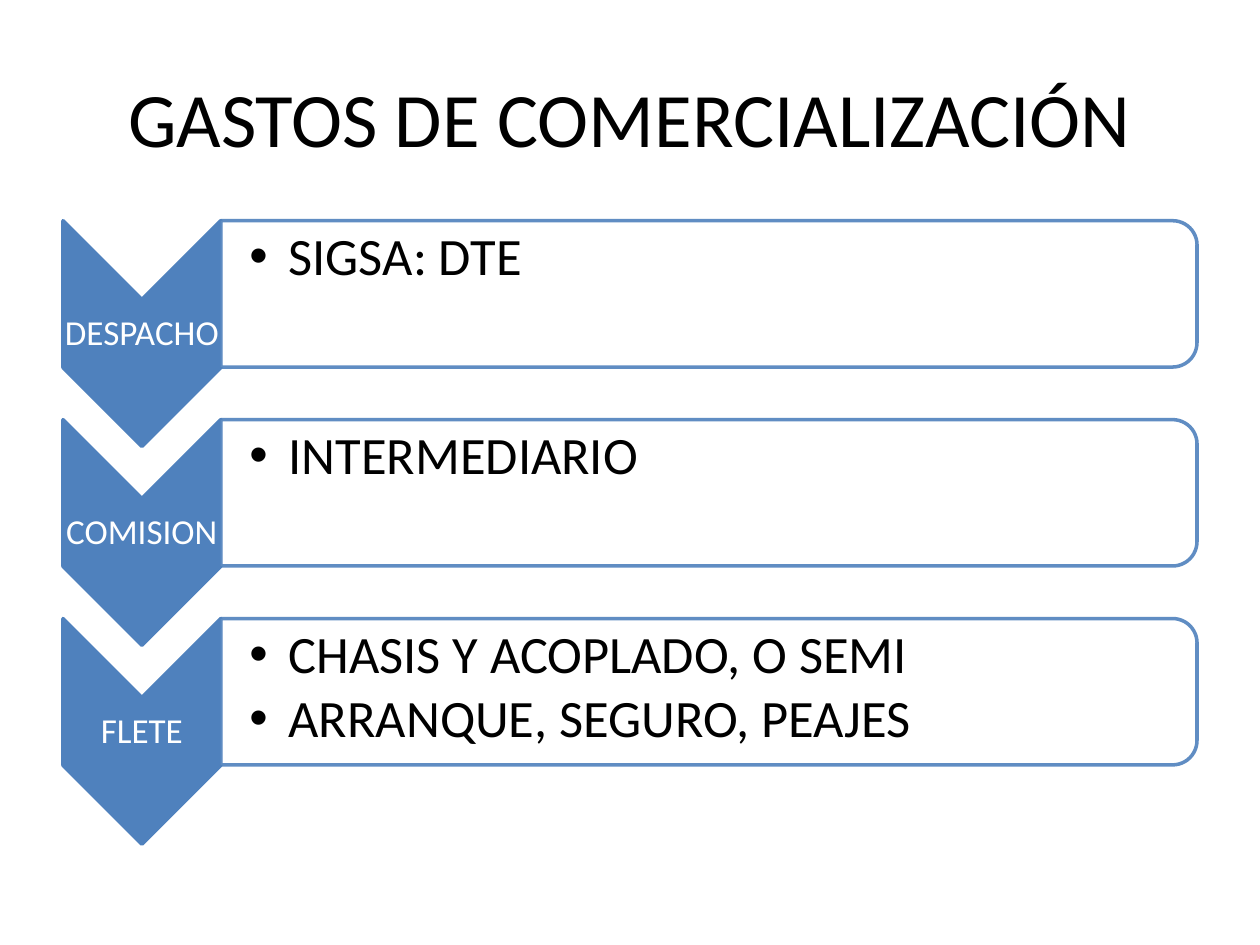
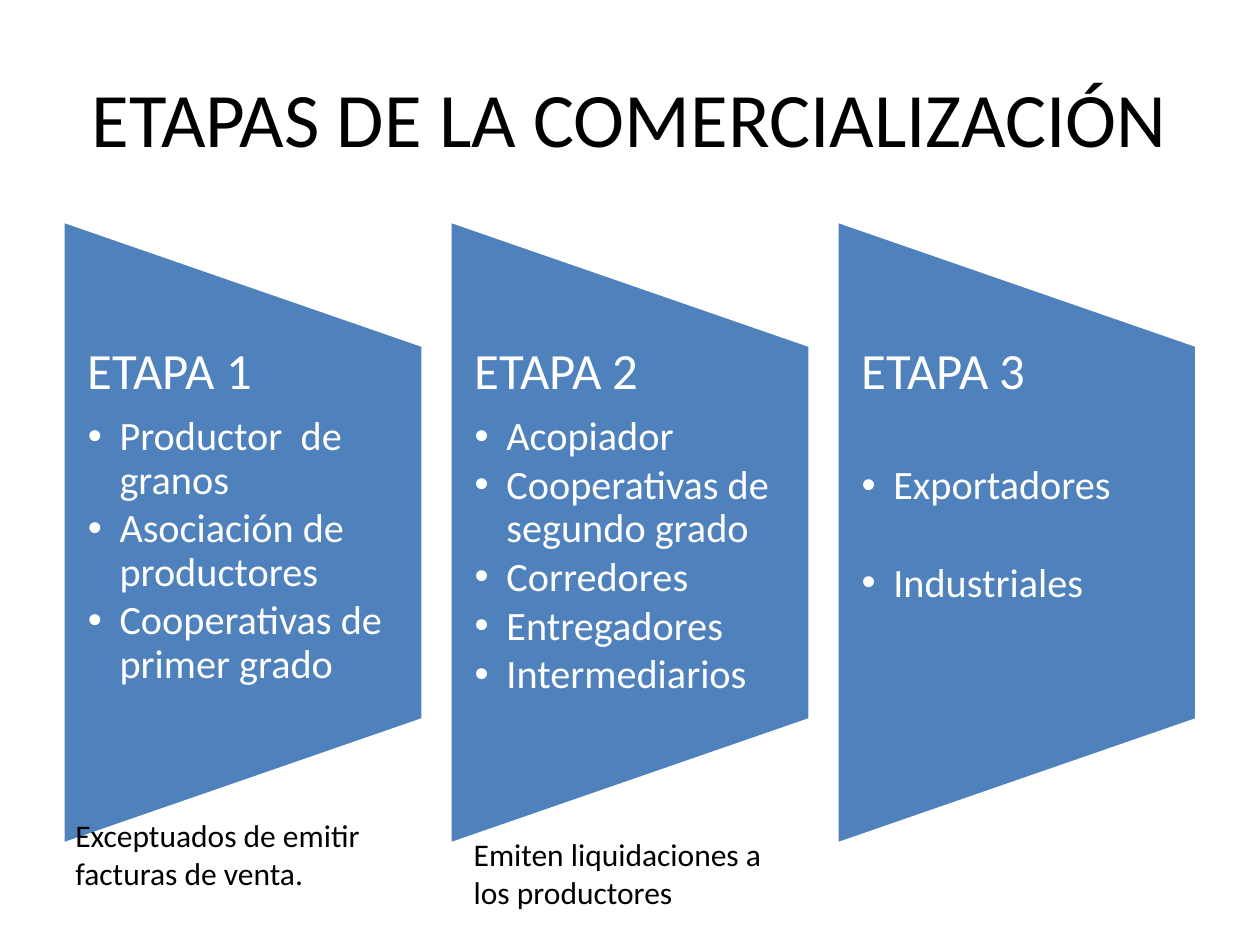
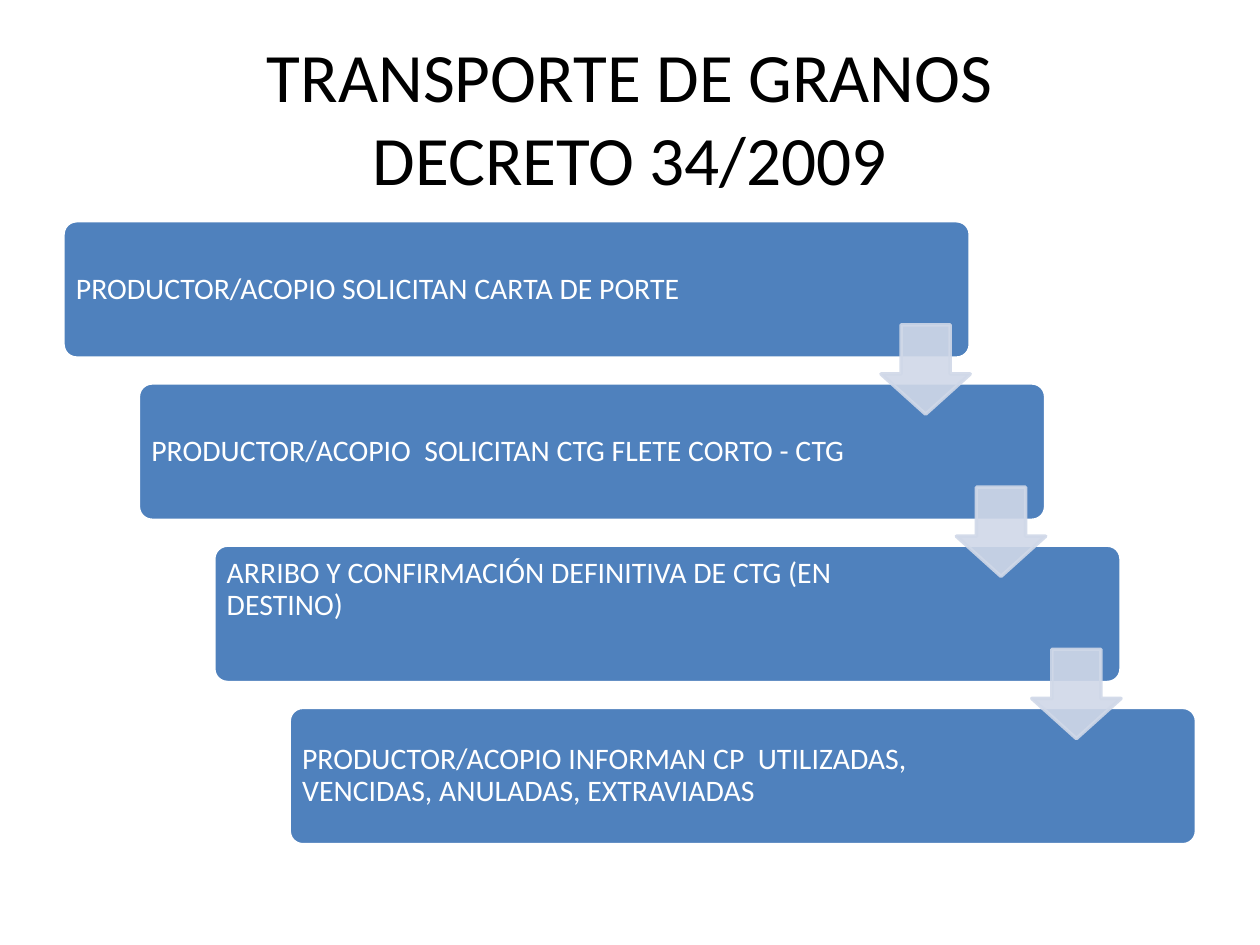
from lxml.etree import SubElement
from pptx import Presentation
from pptx.dml.color import RGBColor
from pptx.enum.shapes import MSO_SHAPE
from pptx.enum.text import MSO_ANCHOR, PP_ALIGN
from pptx.oxml.ns import qn
from pptx.util import Cm, Pt

HUES = {"blue": "4F81BD", "pale": "D0D8E8", "white": "FFFFFF", "black": "000000"}
FONT = "Calibri"
LEFT, TOP = 1.27, 4.45


def block(slide, box, kind=None, fill=None, line=None, turn=0, alpha=None,
          pads=(0.25, 0.13, 0.25, 0.13), anchor=MSO_ANCHOR.TOP):
    """Add a shape, or a text box without kind; box (cm) is the area seen after the turn."""
    left, top, wide, high = box
    if turn:
        left, top = left + (wide - high) / 2, top + (high - wide) / 2
        wide, high = high, wide
    area = [Cm(size) for size in (left, top, wide, high)]
    if kind is None:
        shape = slide.shapes.add_textbox(*area)
    else:
        shape = slide.shapes.add_shape(kind, *area)
        shape.shadow.inherit = False
        shape.rotation = turn
        shape.fill.solid()
        shape.fill.fore_color.rgb = RGBColor.from_string(HUES[fill])
        shape.line.color.rgb = RGBColor.from_string(HUES[line])
        shape.line.width = Pt(2)
    if alpha:
        for tint in shape.fill._xPr.iter(qn("a:srgbClr")):
            SubElement(tint, qn("a:alpha"), val=str(alpha * 1000))
    frame = shape.text_frame
    frame.word_wrap = True
    frame.vertical_anchor = anchor
    frame.margin_left, frame.margin_top, frame.margin_right, frame.margin_bottom = map(Cm, pads)
    return shape


def say(frame, text, size, hue, align=PP_ALIGN.LEFT, space=0.9, after=0, before=0, indent=0):
    """Add one paragraph; an indent (cm) makes it a bullet."""
    para = frame.add_paragraph() if frame.text else frame.paragraphs[0]
    para.alignment = align
    para.line_spacing = space
    para.space_after, para.space_before = Pt(after), Pt(before)
    if indent:
        props = para._p.get_or_add_pPr()
        props.set("marL", str(Cm(indent)))
        props.set("indent", str(-Cm(indent)))
        SubElement(props, qn("a:buFont"), typeface="Arial")
        SubElement(props, qn("a:buChar"), char="•")
    for row, part in enumerate(text.split("\n")):
        if row:
            para.add_line_break()
        run = para.add_run()
        run.text = part
        run.font.name = FONT
        run.font.size = Pt(size)
        run.font.color.rgb = RGBColor.from_string(HUES[hue])


deck = Presentation()
deck.slide_width, deck.slide_height = Cm(25.4), Cm(19.05)

# Titles
slides = []
for text, size in [("GASTOS DE COMERCIALIZACIÓN", 44),
                   ("ETAPAS DE LA COMERCIALIZACIÓN", 44),
                   ("TRANSPORTE DE GRANOS\nDECRETO 34/2009", 39.6)]:
    slide = deck.slides.add_slide(deck.slide_layouts[5])
    title = slide.shapes.title
    title.left, title.top, title.width, title.height = Cm(LEFT), Cm(0.76), Cm(22.86), Cm(3.18)
    title.text_frame.vertical_anchor = MSO_ANCHOR.MIDDLE
    say(title.text_frame, text, size, "black", PP_ALIGN.CENTER, space=1)
    slides.append(slide)
costs, stages, freight = slides

# Costs: a chevron and a bar per row
for row, (label, items) in enumerate([
        ("DESPACHO", ["SIGSA: DTE"]),
        ("COMISION", ["INTERMEDIARIO"]),
        ("FLETE", ["CHASIS Y ACOPLADO, O SEMI", "ARRANQUE, SEGURO, PEAJES"])]):
    top = TOP + row * 4.01
    block(costs, (LEFT, top, 3.18, 4.55), MSO_SHAPE.CHEVRON, "blue", "blue", turn=90)
    tag = block(costs, (LEFT, top + 1.6, 3.18, 1.37), pads=[0.03] * 4, anchor=MSO_ANCHOR.MIDDLE)
    say(tag.text_frame, label, 20, "white", PP_ALIGN.CENTER)
    block(costs, (4.45, top, 19.68, 2.95), MSO_SHAPE.ROUND_2_SAME_RECTANGLE,
          "white", "blue", turn=90, alpha=90)
    note = block(costs, (4.45, top + 0.15, 19.53, 2.67), pads=(0.58, 0.05, 0.05, 0.05))
    for item in items:
        say(note.text_frame, item, 30, "black", after=4, indent=0.79)

# Stages: a column each, with extra room above the items where they are few
for col, (items, room) in enumerate([
        (["Productor  de granos", "Asociación de productores",
          "Cooperativas de primer grado"], 0),
        (["Acopiador", "Cooperativas de segundo grado", "Corredores",
          "Entregadores", "Intermediarios"], 0),
        (["Exportadores", "Industriales"], 28)]):
    left = LEFT + col * 7.8
    block(stages, (left, TOP, 7.26, 12.57), MSO_SHAPE.FLOWCHART_MANUAL_OPERATION,
          "blue", "white", turn=270)
    note = block(stages, (left, 6.96, 7.26, 7.54), pads=(0.5, 0, 0.5, 0))
    say(note.text_frame, f"ETAPA {col + 1}", 29, "white", after=9)
    for item in items:
        say(note.text_frame, item, 23, "white", after=3, before=room, indent=0.64)

for left, top, wide, text in [
        (LEFT, 16.33, 6.63, "Exceptuados de emitir facturas de venta."),
        (9.3, 16.71, 6.81, "Emiten liquidaciones a los productores")]:
    note = block(stages, (left, top, wide, 1.8))
    say(note.text_frame, text, 18, "black", space=1)

# Freight: steps going down to the right, then the arrows between them
STEPS = [("PRODUCTOR/ACOPIO SOLICITAN CARTA DE PORTE", MSO_ANCHOR.MIDDLE),
         ("PRODUCTOR/ACOPIO  SOLICITAN CTG FLETE CORTO - CTG", MSO_ANCHOR.MIDDLE),
         ("ARRIBO Y CONFIRMACIÓN DEFINITIVA DE CTG (EN DESTINO)", MSO_ANCHOR.TOP),
         ("PRODUCTOR/ACOPIO INFORMAN CP  UTILIZADAS, VENCIDAS, ANULADAS, EXTRAVIADAS",
          MSO_ANCHOR.MIDDLE)]
RIGHT, DOWN = 1.52, 3.27
for row, (text, anchor) in enumerate(STEPS):
    step = block(freight, (LEFT + row * RIGHT, TOP + row * DOWN, 18.29, 2.77),
                 MSO_SHAPE.ROUNDED_RECTANGLE, "blue", "white",
                 pads=(0.18, 0.18, 3.5, 0.18), anchor=anchor)
    step.adjustments[0] = 0.1
    say(step.text_frame, text, 17, "white")

for row in range(len(STEPS) - 1):
    arrow = block(freight, (17.76 + row * RIGHT, 6.55 + row * DOWN, 1.8, 1.8),
                  MSO_SHAPE.DOWN_ARROW, "pale", "pale", alpha=90)
    arrow.adjustments[0], arrow.adjustments[1] = 0.55, 0.45

deck.save("out.pptx")
